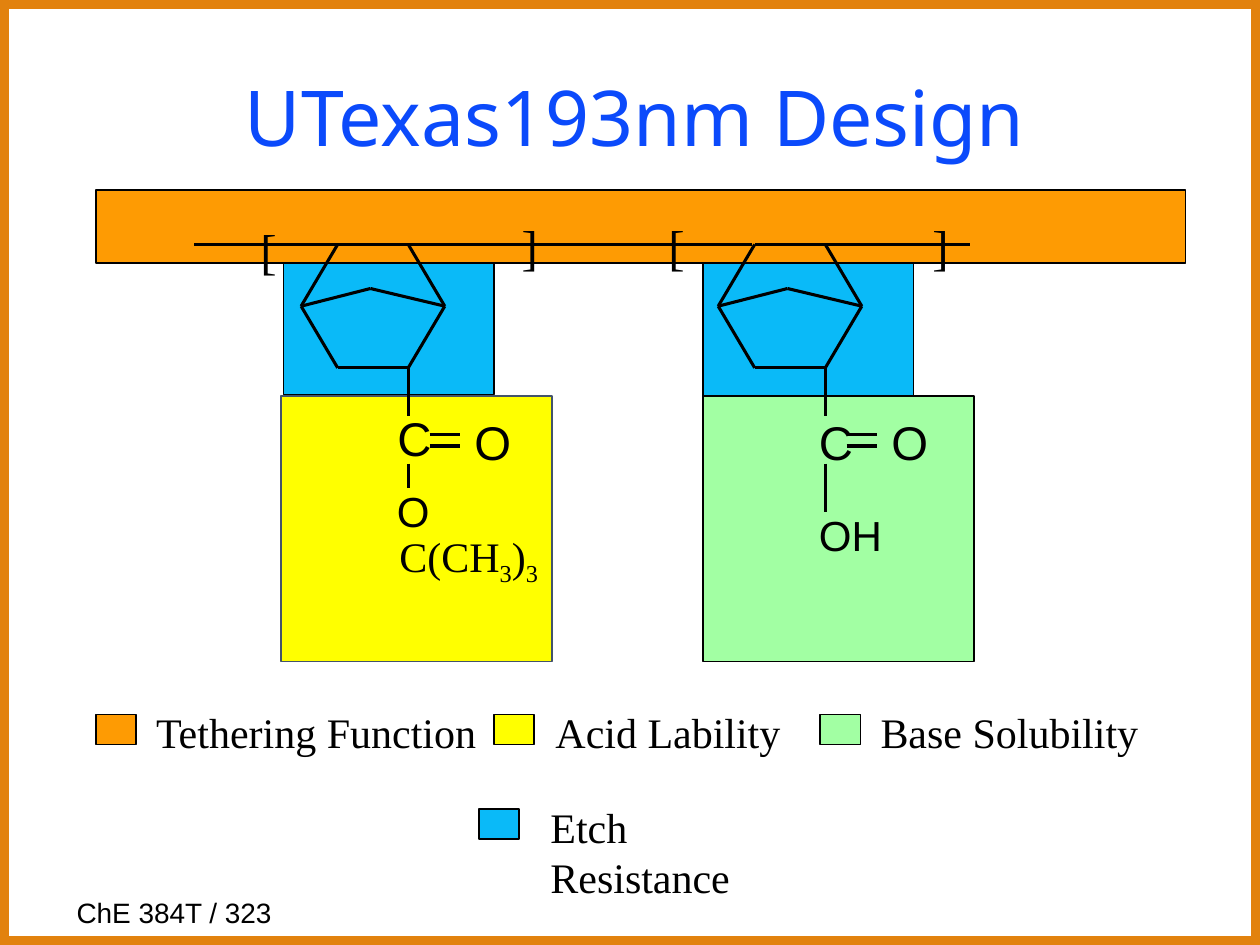
from lxml.etree import SubElement
from pptx import Presentation
from pptx.dml.color import RGBColor as RGB
from pptx.enum.shapes import MSO_CONNECTOR as Link, MSO_SHAPE as Kind
from pptx.enum.text import MSO_ANCHOR as Anchor, PP_ALIGN as Align
from pptx.oxml.ns import qn
from pptx.util import Inches, Pt

THEME = {
    "black": "000000", "frame": "E2820E", "title": "0B4AFB", "edge": "44546A",
    "tether": "FE9B03", "acid": "FFFF00", "base": "A2FFA3", "etch": "0ABAF8",
    "serif": "Times New Roman", "sans": "Arial", "head": "Noto Sans",
    "small": 16, "body": 24, "atom": 27, "mark": 28, "top": 44,
    "thin": 1, "bond": 1.75, "border": 10,
}

FRAME = (0, 0, 10, 7.5)
BLOCKS = [  # box, fill, line colour
    ((5.58, 1.92, 1.67, 1.36), "etch", "black"),
    ((2.25, 1.94, 1.67, 1.19), "etch", "black"),
    ((0.76, 1.51, 8.65, 0.58), "tether", "black"),
    ((2.23, 3.14, 2.15, 2.11), "acid", "edge"),
    ((5.58, 3.14, 2.15, 2.11), "base", "black"),
]
LEGEND = [  # label, fill, swatch left and top, label left, width, right inset
    ("Tethering Function", "tether", 0.76, 5.67, 1.14, 2.77, 0.1),
    ("Acid Lability", "acid", 3.92, 5.67, 4.31, 1.99, 0.1),
    ("Base Solubility", "base", 6.51, 5.67, 6.89, 2.26, 0.1),
    ("Etch Resistance", "etch", 3.8, 6.42, 4.27, 2.31, 0.5),
]
ATOMS = [  # text, box, size, font
    ("C", (2.85, 3.25, 0.88, 0.45), "atom", "sans"),
    ("O", (3.67, 3.28, 0.48, 0.52), "atom", "sans"),
    ("O", (3.15, 3.85, 0.26, 0.4), "body", "sans"),
    ("C", (6.41, 3.28, 0.45, 0.52), "atom", "sans"),
    ("O", (6.98, 3.28, 0.48, 0.52), "atom", "sans"),
    ("OH", (6.5, 4.04, 0.5, 0.4), "body", "sans"),
    ("C(CH_3_)_3", (3.02, 4.21, 1.4, 0.4), "body", "serif"),
]
MARKS = [("[", 5.16, 1.67, 0.42), ("[", 1.92, 1.7, 0.42),
         ("]", 3.92, 1.67, 0.57), ("]", 7.18, 1.67, 0.57)]

LEVEL, STEP = 1.94, 0.57  # height of the polymer chain, length of one bond
CHAINS = [(1.54, 5), (4.26, 3), (5.99, 3)]  # start, number of bonds
UNITS = [(2.68, 3.87), (5.99, 4.06)]  # ring left, end of the lowest bond
RING = [(0.56, 1.94), (0.85, 2.43), (0.56, 2.92), (0, 2.92), (-0.29, 2.43), (0, 1.94)]
BRIDGE = [(-0.29, 2.43), (0.26, 2.29), (0.85, 2.43)]
STEM = [(0.56, 2.92), (0.56, 3.3)]
DOUBLE = [[(0.73, y), (0.97, y)] for y in (3.54, 3.45)]


def hue(name):
    return RGB.from_string(THEME[name])


def rect(box, fill, edge="black", width="thin"):
    shape = slide.shapes.add_shape(Kind.RECTANGLE, *map(Inches, box))
    shape.shadow.inherit = False
    if fill:
        shape.fill.solid()
        shape.fill.fore_color.rgb = hue(fill)
    else:
        shape.fill.background()
    shape.line.color.rgb = hue(edge)
    shape.line.width = Pt(THEME[width])


def text(words, box, size, font, color="black", align=Align.CENTER,
         inset=(0.1, 0.05, 0.1, 0.05), **form):
    """Add a text box; parts between underscores are subscripts."""
    frame = slide.shapes.add_textbox(*map(Inches, box)).text_frame
    sides = ("margin_left", "margin_top", "margin_right", "margin_bottom")
    form = {"word_wrap": False, **dict(zip(sides, map(Inches, inset))), **form}
    for key, val in form.items():
        setattr(frame, key, val)
    para = frame.paragraphs[0]
    para.alignment = align
    for num, part in enumerate(words.split("_")):
        if not part:
            continue
        run = para.add_run()
        run.text = part
        look = {"name": THEME[font], "size": Pt(THEME[size])}
        for key, val in look.items():
            setattr(run.font, key, val)
        run.font.color.rgb = hue(color)
        if num % 2:
            run.font._element.set("baseline", "-25000")


def bonds(points, left=0):
    """Join each point to the next, shifted right by left."""
    for (ax, ay), (bx, by) in zip(points, points[1:]):
        ends = map(Inches, (left + ax, ay, left + bx, by))
        line = slide.shapes.add_connector(Link.STRAIGHT, *ends)
        line.line.color.rgb = hue("black")
        line.line.width = Pt(THEME["bond"])
        SubElement(line._element.spPr, qn("a:effectLst"))


deck = Presentation()
deck.slide_width, deck.slide_height = Inches(10), Inches(7.5)
slide = deck.slides.add_slide(deck.slide_layouts[6])

text("ChE 384T / 323", (0.51, 7.06, 2.86, 0.37), "small", "sans",
     align=Align.LEFT, word_wrap=True)
rect(FRAME, None, "frame", "border")
for block in BLOCKS:
    rect(*block)
text("UTexas193nm Design", (0.74, 0.5, 8.6, 0.83), "top", "head", "title",
     vertical_anchor=Anchor.MIDDLE)

for label, fill, x, y, left, width, right in LEGEND:
    rect((x, y, 0.32, 0.24), fill)
    text(label, (left, y - 0.11, width, 0.51), "body", "serif", align=Align.LEFT,
         inset=(0.1, 0.05, right, 0.05), word_wrap=right > 0.1)

for start, count in CHAINS:
    bonds([(start + i * STEP, LEVEL) for i in range(count + 1)])
for left, end in UNITS:
    for trail in (RING, BRIDGE, STEM, *DOUBLE, [(0.56, 3.68), (0.56, end)]):
        bonds(trail, left)

for words, box, size, font in ATOMS:
    text(words, box, size, font, inset=(0, 0, 0, 0))
for mark, x, y, width in MARKS:
    text(mark, (x, y, width, 0.57), "mark", "serif")

deck.save("out.pptx")
